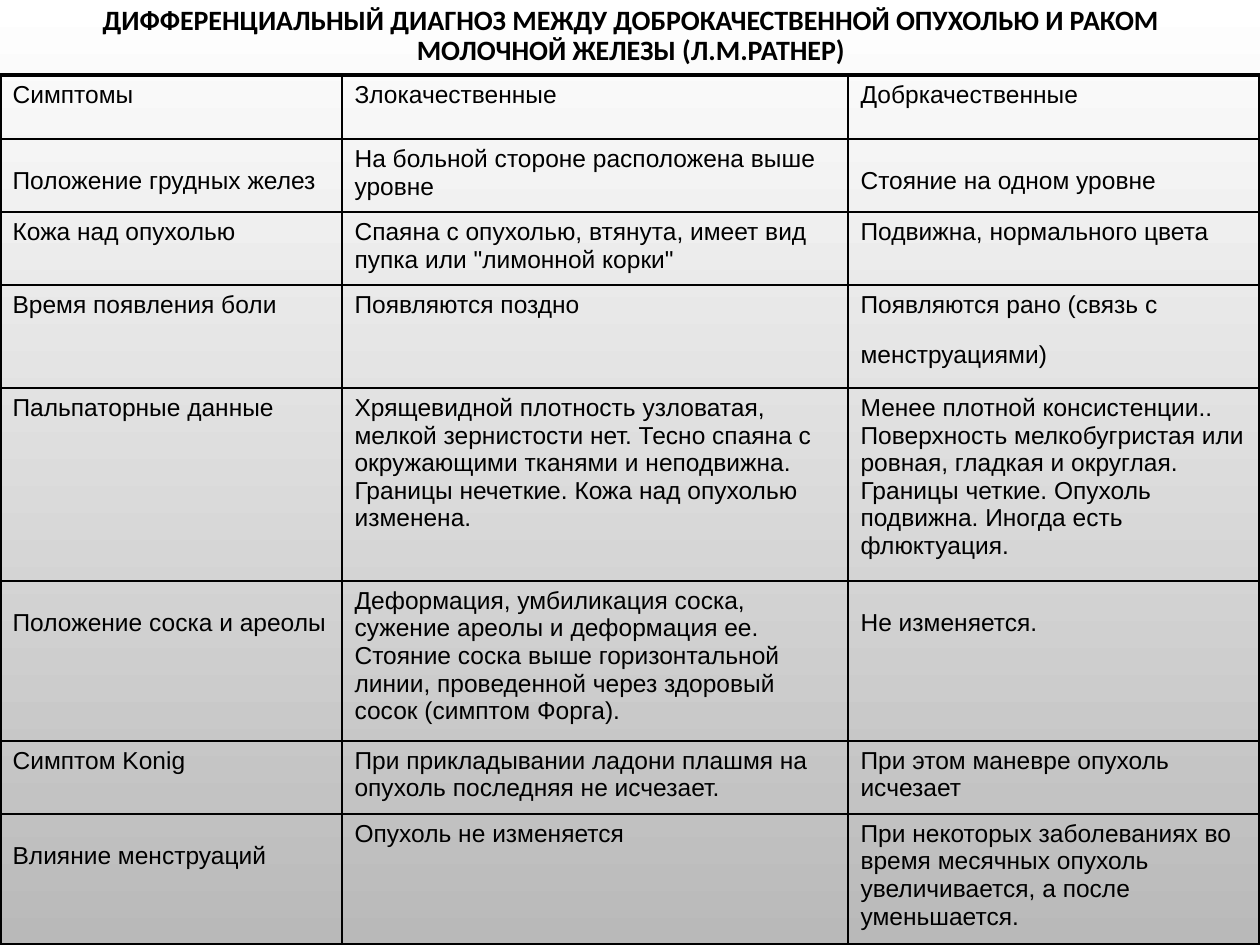
import pptx
import pptx.util
import pptx.dml.color
import pptx.enum.text
import lxml.etree
from pptx.oxml.ns import qn

PX = 914400 / 126
BLACK = pptx.dml.color.RGBColor(0x00, 0x00, 0x00)
WHITE = pptx.dml.color.RGBColor(0xFF, 0xFF, 0xFF)
GRAY = pptx.dml.color.RGBColor(0xB9, 0xB9, 0xB9)

TITLE = ("ДИФФЕРЕНЦИАЛЬНЫЙ ДИАГНОЗ МЕЖДУ ДОБРОКАЧЕСТВЕННОЙ ОПУХОЛЬЮ И РАКОМ "
         "МОЛОЧНОЙ ЖЕЛЕЗЫ (Л.М.РАТНЕР)")
COLUMNS = [342, 506, 412]
ROWS = [
    (64, ["Симптомы", "Злокачественные", "Добркачественные"]),
    (73, ["Положение грудных желез",
          "На больной стороне расположена выше уровне",
          "Стояние на одном уровне"]),
    (73, ["Кожа над опухолью",
          'Спаяна с опухолью, втянута, имеет вид пупка или "лимонной корки"',
          "Подвижна, нормального цвета"]),
    (103, ["Время появления боли", "Появляются поздно",
           "Появляются рано (связь с менструациями)"]),
    (193, ["Пальпаторные данные",
           "Хрящевидной плотность узловатая, мелкой зернистости нет. Тесно спаяна с "
           "окружающими тканями и неподвижна. Границы нечеткие. Кожа над опухолью изменена.",
           "Менее плотной консистенции.. Поверхность мелкобугристая или ровная, гладкая "
           "и округлая. Границы четкие. Опухоль подвижна. Иногда есть флюктуация."]),
    (160, ["Положение соска и ареолы",
           "Деформация, умбиликация соска, сужение ареолы и деформация ее. Стояние соска "
           "выше горизонтальной линии, проведенной через здоровый сосок (симптом Форга).",
           "Не изменяется."]),
    (73, ["Симптом Konig",
          "При прикладывании ладони плашмя на опухоль последняя не исчезает.",
          "При этом маневре опухоль исчезает"]),
    (131, ["Влияние менструаций", "Опухоль не изменяется",
           "При некоторых заболеваниях во время месячных опухоль увеличивается, "
           "a после уменьшается."]),
]
TALL_CELLS = {(1, 0), (1, 2), (3, 2), (5, 0), (5, 2), (7, 0)}


def px(n):
    """Turn px into EMU."""
    return pptx.util.Emu(round(n * PX))


def add_run(p, text, size=14, font="Arial", bold=False, color=BLACK):
    """Append a formatted run to a paragraph."""
    r = p.add_run()
    r.text = text
    r.font.size = pptx.util.Pt(size)
    r.font.name = font
    r.font.bold = bold
    r.font.color.rgb = color


def set_borders(cell, **widths):
    """Draw cell borders with widths in points for L, R, T and B."""
    tcPr = cell._tc.get_or_add_tcPr()
    for side in "LRTB":
        ln = lxml.etree.SubElement(tcPr, qn(f"a:ln{side}"),
                                   w=str(pptx.util.Pt(widths[side])))
        fill = lxml.etree.SubElement(ln, qn("a:solidFill"))
        lxml.etree.SubElement(fill, qn("a:srgbClr"), val=str(BLACK))


def add_background(slide):
    """Fill the slide from white at the top to gray at the bottom."""
    fill = slide.background.fill
    fill.gradient()
    fill.gradient_angle = 270
    for stop, position, color in zip(fill.gradient_stops, (0, 1), (WHITE, GRAY)):
        stop.position = position
        stop.color.rgb = color


def add_title(slide, x, y, w, h):
    """Place the centred heading in its box."""
    tf = slide.shapes.add_textbox(px(x), px(y), px(w), px(h)).text_frame
    tf.word_wrap = True
    tf.vertical_anchor = pptx.enum.text.MSO_ANCHOR.TOP
    p = tf.paragraphs[0]
    p.alignment = pptx.enum.text.PP_ALIGN.CENTER
    p.line_spacing = 0.9
    add_run(p, TITLE, size=16, font="Calibri", bold=True)


def add_symptom_table(slide, x, y):
    """Place the symptom table with thick outer and thin inner borders."""
    w, h = sum(COLUMNS), sum(height for height, _ in ROWS)
    table = slide.shapes.add_table(len(ROWS), len(COLUMNS),
                                   px(x), px(y), px(w), px(h)).table
    table.first_row = table.horz_banding = False
    for column, width in zip(table.columns, COLUMNS):
        column.width = px(width)
    last_row, last_col = len(ROWS) - 1, len(COLUMNS) - 1
    for i, (height, texts) in enumerate(ROWS):
        table.rows[i].height = px(height)
        for j, text in enumerate(texts):
            cell = table.cell(i, j)
            edges = {"L": j == 0, "R": j == last_col, "T": i == 0, "B": i == last_row}
            set_borders(cell, **{side: 2.25 if outer else 1
                                 for side, outer in edges.items()})
            cell.fill.background()
            p = cell.text_frame.paragraphs[0]
            add_run(p, text)
            if (i, j) in TALL_CELLS:
                add_run(p, " ", size=28)


def main():
    """Build and save the slide."""
    prs = pptx.Presentation()
    prs.slide_width, prs.slide_height = px(1260), px(945)
    slide = prs.slides.add_slide(prs.slide_layouts[6])
    add_background(slide)
    add_title(slide, 64, 0, 1134, 106)
    add_symptom_table(slide, 0, 75)
    prs.save("out.pptx")


if __name__ == "__main__":
    main()
